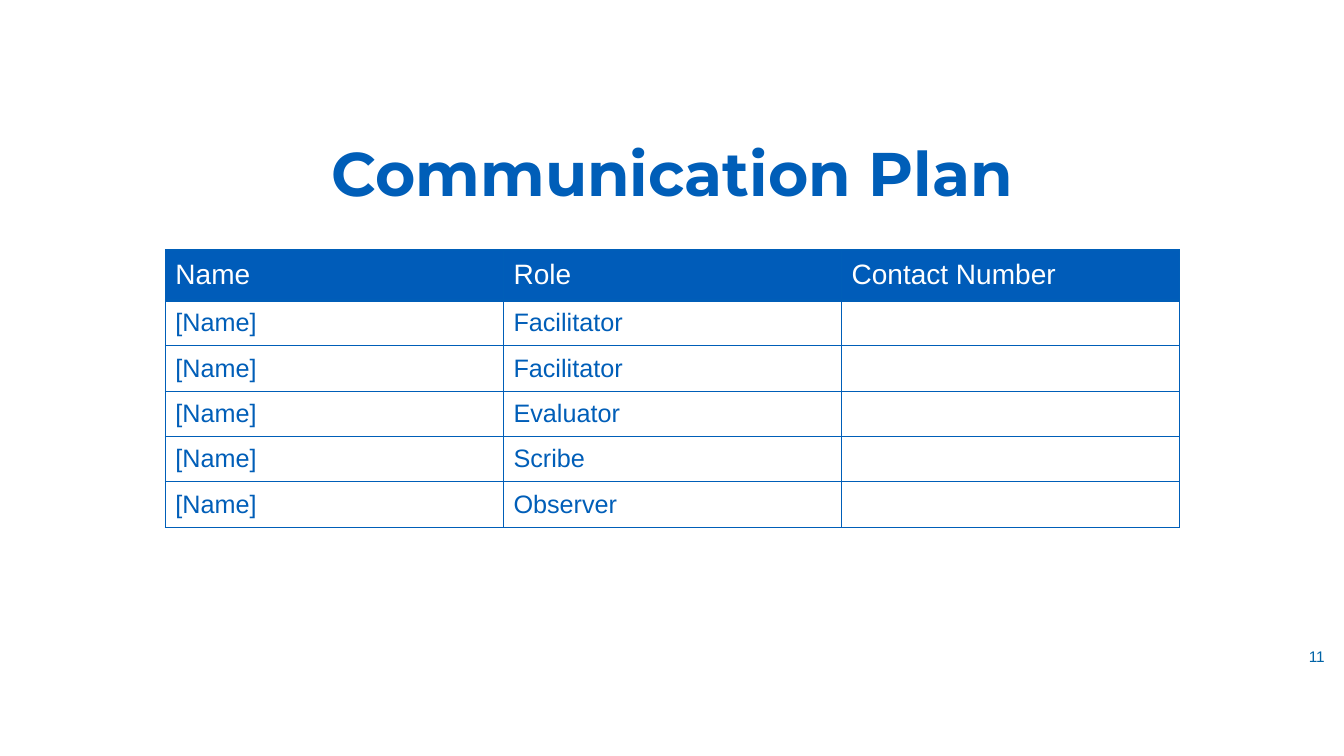
"""Build the Communication Plan slide with its contact table."""
from lxml.etree import SubElement
from pptx import Presentation
from pptx.dml.color import RGBColor
from pptx.enum.text import MSO_ANCHOR as Anchor, PP_ALIGN as Align
from pptx.oxml.ns import qn
from pptx.util import Inches, Pt

BLUE = RGBColor(0x00, 0x5E, 0xB8)
HEADER_BLUE = RGBColor(0x00, 0x5C, 0xB9)
NUMBER_BLUE = RGBColor(0x00, 0x63, 0xA6)
WHITE = RGBColor(0xFF, 0xFF, 0xFF)

CONTACTS = [
    ("Name", "Role", "Contact Number"),
    ("[Name]", "Facilitator", ""),
    ("[Name]", "Facilitator", ""),
    ("[Name]", "Evaluator", ""),
    ("[Name]", "Scribe", ""),
    ("[Name]", "Observer", ""),
]


class PlanSlide:
    body_font = "Arial"
    title_font = "Montserrat"

    def __init__(self, deck):
        self.slide = deck.slides.add_slide(deck.slide_layouts[5])

    def put_text(self, frame, text, size, color, font=body_font, bold=False, align=Align.LEFT):
        paragraph = frame.paragraphs[0]
        paragraph.text = text
        paragraph.alignment = align
        paragraph.font.name = font
        paragraph.font.size = Pt(size)
        paragraph.font.bold = bold
        paragraph.font.color.rgb = color
        return paragraph

    def title(self, text, left, top, width, height):
        heading = self.slide.shapes.title
        heading.left, heading.top = Inches(left), Inches(top)
        heading.width, heading.height = Inches(width), Inches(height)
        heading.text_frame.vertical_anchor = Anchor.MIDDLE
        line = self.put_text(heading.text_frame, text, 44, BLUE, self.title_font, True, Align.CENTER)
        line.line_spacing = 0.9

    def page_number(self, text, left, top, width, height):
        number = self.slide.shapes.add_textbox(
            Inches(left), Inches(top), Inches(width), Inches(height))
        number.text_frame.word_wrap = True
        number.text_frame.vertical_anchor = Anchor.MIDDLE
        self.put_text(number.text_frame, text, 11, NUMBER_BLUE, align=Align.CENTER)

    def borders(self, cell, bottom):
        properties = cell._tc.get_or_add_tcPr()
        for side, width in (("lnL", 1), ("lnR", 1), ("lnT", 1), ("lnB", bottom)):
            edge = SubElement(properties, qn(f"a:{side}"), w=str(Pt(width)))
            fill = SubElement(edge, qn("a:solidFill"))
            SubElement(fill, qn("a:srgbClr"), val=str(BLUE))

    def table(self, rows, left, top, width, header_height, row_height):
        height = header_height + row_height * (len(rows) - 1)
        grid = self.slide.shapes.add_table(
            len(rows), len(rows[0]),
            Inches(left), Inches(top), Inches(width), Inches(height)).table
        for r, texts in enumerate(rows):
            header = r == 0
            grid.rows[r].height = Inches(header_height if header else row_height)
            for c, text in enumerate(texts):
                cell = grid.cell(r, c)
                cell.vertical_anchor = Anchor.MIDDLE
                self.borders(cell, 3 if header else 1)
                cell.fill.solid()
                cell.fill.fore_color.rgb = HEADER_BLUE if header else WHITE
                self.put_text(cell.text_frame, text, 20 if header else 18,
                              WHITE if header else BLUE)


def main():
    deck = Presentation()
    deck.slide_width, deck.slide_height = Inches(13.33), Inches(7.5)
    plan = PlanSlide(deck)
    plan.page_number("11", 12.79, 6.31, 0.54, 0.41)
    plan.title("Communication Plan", 0.92, 1.03, 11.5, 1.45)
    plan.table(CONTACTS, 1.64, 2.48, 10.06, 0.5, 0.45)
    deck.save("out.pptx")


if __name__ == "__main__":
    main()
